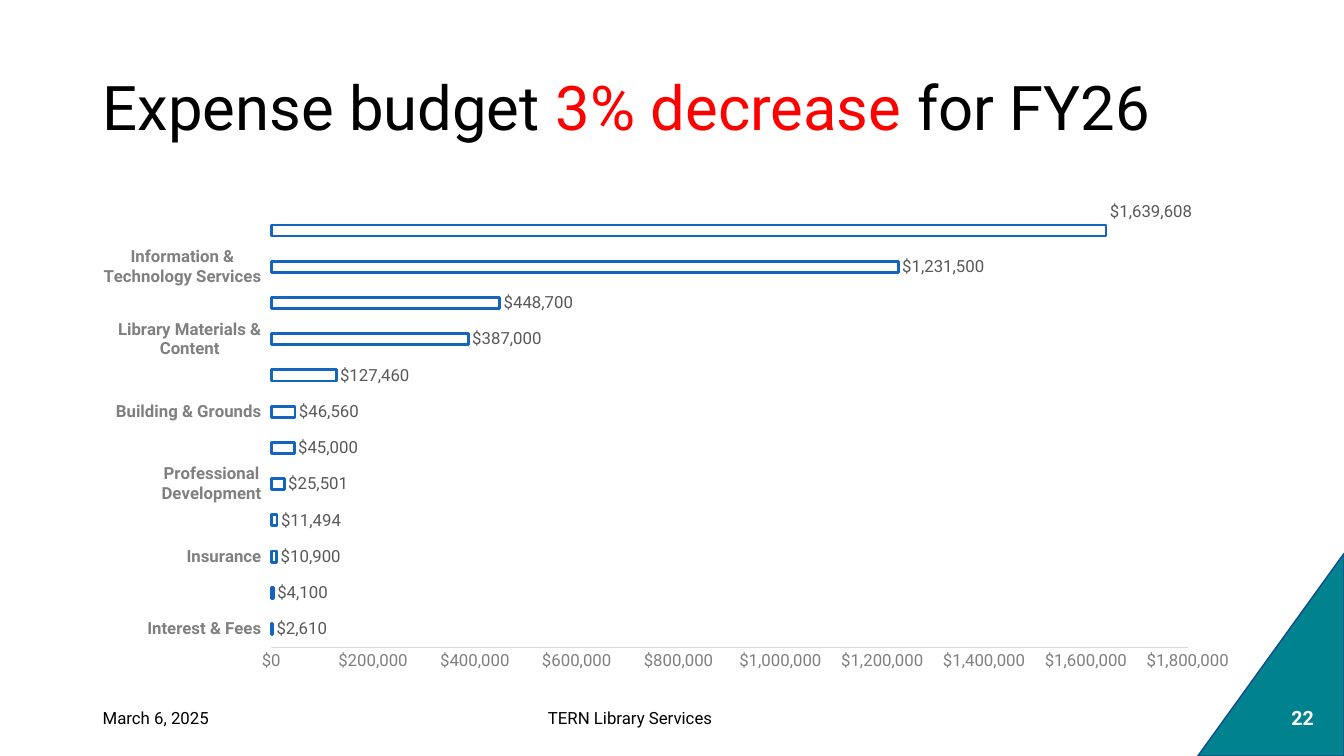
import pptx
import pptx.chart.data
import pptx.dml.color
import pptx.enum.chart
import pptx.enum.shapes
import pptx.enum.text
import pptx.oxml
import pptx.util
from dataclasses import dataclass

# Content; every other bar is unnamed
HEADLINE = [("Expense budget ", "ink"), ("3% decrease ", "alert"), ("for FY26", "ink")]
DATE, ORGANISATION, PAGE = "March 6, 2025", "TERN Library Services", "22"
EXPENSES = [
    ("Interest & Fees", 2610),
    ("", 4100),
    ("Insurance", 10900),
    ("", 11494),
    ("Professional Development", 25501),
    ("", 45000),
    ("Building & Grounds", 46560),
    ("", 127460),
    ("Library Materials & Content", 387000),
    ("", 448700),
    ("Information & Technology Services", 1231500),
    ("", 1639608),
]
DOLLARS = '"$"#,##0'


@dataclass(frozen=True)
class Theme:
    font: str = "Roboto"
    ink: str = "000000"
    alert: str = "FF0000"
    paper: str = "FFFFFF"
    teal: str = "00838E"
    teal_edge: str = "104B8E"
    bar: str = "1565C0"
    axis_text: str = "808080"
    value_text: str = "595959"
    rule: str = "D9D9D9"
    title: int = 44
    page: int = 14
    small: int = 12


THEME = Theme()
ALIGN = pptx.enum.text.PP_ALIGN

# Layout, in inches
WIDTH, HEIGHT = 13.33, 7.5
MARGIN = 0.92
BODY_WIDTH = WIDTH - 2 * MARGIN
CHART_TOP, CHART_HEIGHT = 2, 4.76
BARS_LEFT, BARS_TOP, BARS_WIDTH, BARS_HEIGHT = 2.69, 2.08, 9.09, 4.34
FOOTER_TOP, FOOTER_HEIGHT = 6.92, 0.4
CORNER_WIDTH, CORNER_HEIGHT = 1.45, 2.01


def inches(*lengths):
    return [pptx.util.Inches(length) for length in lengths]


def rgb(colour):
    return pptx.dml.color.RGBColor.from_string(colour)


def style(font, size, colour, bold=False):
    font.name, font.size, font.bold = THEME.font, pptx.util.Pt(size), bold
    font.color.rgb = rgb(colour)


def add_text(slide, box, runs, size, align=ALIGN.LEFT, bold=False):
    frame = slide.shapes.add_textbox(*inches(*box)).text_frame
    frame.word_wrap = True
    frame.vertical_anchor = pptx.enum.text.MSO_ANCHOR.MIDDLE
    paragraph = frame.paragraphs[0]
    paragraph.alignment = align
    style(paragraph.font, size, runs[0][1], bold)
    for words, colour in runs:
        run = paragraph.add_run()
        run.text = words
        if len(runs) > 1:
            run.font.color.rgb = rgb(colour)
    return paragraph


def chart_layout(inner="", **shares):
    """Manual layout whose lengths are shares of the chart's size."""
    parts = "".join(f'<c:{key} val="{share}"/>' for key, share in shares.items())
    return pptx.oxml.parse_xml(
        '<c:layout xmlns:c="http://schemas.openxmlformats.org/drawingml/2006/chart">'
        f"<c:manualLayout>{inner}{parts}</c:manualLayout></c:layout>")


def add_corner(slide):
    # The triangle is turned a quarter, so its box is laid out on its side
    left = WIDTH - (CORNER_WIDTH + CORNER_HEIGHT) / 2
    top = HEIGHT - (CORNER_WIDTH + CORNER_HEIGHT) / 2
    corner = slide.shapes.add_shape(
        pptx.enum.shapes.MSO_SHAPE.RIGHT_TRIANGLE,
        *inches(left, top, CORNER_HEIGHT, CORNER_WIDTH))
    corner.rotation = 270
    corner.shadow.inherit = False
    corner.fill.solid()
    corner.fill.fore_color.rgb = rgb(THEME.teal)
    corner.line.color.rgb = rgb(THEME.teal_edge)
    corner.line.width = pptx.util.Pt(1)


def add_expense_chart(slide):
    kinds = pptx.enum.chart
    budget = pptx.chart.data.CategoryChartData(number_format=DOLLARS)
    budget.categories = [name for name, amount in EXPENSES]
    budget.add_series("Series 1", [amount for name, amount in EXPENSES])
    chart = slide.shapes.add_chart(
        kinds.XL_CHART_TYPE.BAR_CLUSTERED,
        *inches(MARGIN, CHART_TOP, BODY_WIDTH, CHART_HEIGHT), budget).chart
    chart.has_legend = chart.has_title = False
    style(chart.font, 10, THEME.ink)

    # Bars
    plot = chart.plots[0]
    plot.vary_by_categories = False
    plot.gap_width, plot.overlap = 227, -48
    bars = plot.series[0]
    bars.format.fill.background()
    bars.format.line.color.rgb = rgb(THEME.bar)
    bars.format.line.width = pptx.util.Pt(2)

    # Axes
    names, amounts = chart.category_axis, chart.value_axis
    style(names.tick_labels.font, THEME.small, THEME.axis_text, bold=True)
    names.format.line.fill.background()
    style(amounts.tick_labels.font, THEME.small, THEME.axis_text)
    amounts.tick_labels.number_format = DOLLARS
    amounts.tick_labels.number_format_is_linked = False
    amounts.has_major_gridlines = False
    amounts.major_tick_mark = kinds.XL_TICK_MARK.NONE
    amounts.minimum_scale, amounts.maximum_scale, amounts.major_unit = 0, 1800000, 200000
    amounts.format.line.color.rgb = rgb(THEME.rule)
    amounts.format.line.width = pptx.util.Pt(0.75)

    # Value labels; the longest bar's label is lifted above its end
    labels = bars.data_labels
    labels.show_value = True
    labels.position = kinds.XL_LABEL_POSITION.OUTSIDE_END
    labels.number_format, labels.number_format_is_linked = DOLLARS, False
    style(labels.font, THEME.small, THEME.value_text)
    largest = bars.points[len(EXPENSES) - 1].data_label
    style(largest.font, THEME.small, THEME.value_text)
    largest.position = kinds.XL_LABEL_POSITION.OUTSIDE_END
    lifted = labels._element.xpath("c:dLbl")[0]
    lifted.insert(1, chart_layout(x=0, y=-0.04))

    # Plot area
    area = chart._chartSpace.chart.plotArea
    for automatic in area.xpath("c:layout"):
        area.remove(automatic)
    frame = '<c:layoutTarget val="inner"/><c:xMode val="edge"/><c:yMode val="edge"/>'
    area.insert(0, chart_layout(
        frame,
        x=(BARS_LEFT - MARGIN) / BODY_WIDTH,
        y=(BARS_TOP - CHART_TOP) / CHART_HEIGHT,
        w=BARS_WIDTH / BODY_WIDTH,
        h=BARS_HEIGHT / CHART_HEIGHT))


def main():
    deck = pptx.Presentation()
    deck.slide_width, deck.slide_height = inches(WIDTH, HEIGHT)
    slide = deck.slides.add_slide(deck.slide_layouts[6])
    add_corner(slide)

    # Title
    headline = add_text(slide, (MARGIN, 0.37, BODY_WIDTH, 1.45),
                        [(words, getattr(THEME, role)) for words, role in HEADLINE],
                        THEME.title)
    headline.line_spacing = 0.9

    add_expense_chart(slide)

    # Footer
    for words, left, width, size, colour, align, bold in [
        (DATE, MARGIN, 3, THEME.small, THEME.ink, ALIGN.LEFT, False),
        (ORGANISATION, 4, 4.5, THEME.small, THEME.ink, ALIGN.CENTER, False),
        (PAGE, 12.63, 0.58, THEME.page, THEME.paper, ALIGN.CENTER, True),
    ]:
        add_text(slide, (left, FOOTER_TOP, width, FOOTER_HEIGHT),
                 [(words, colour)], size, align, bold)
    deck.save("out.pptx")


if __name__ == "__main__":
    main()
